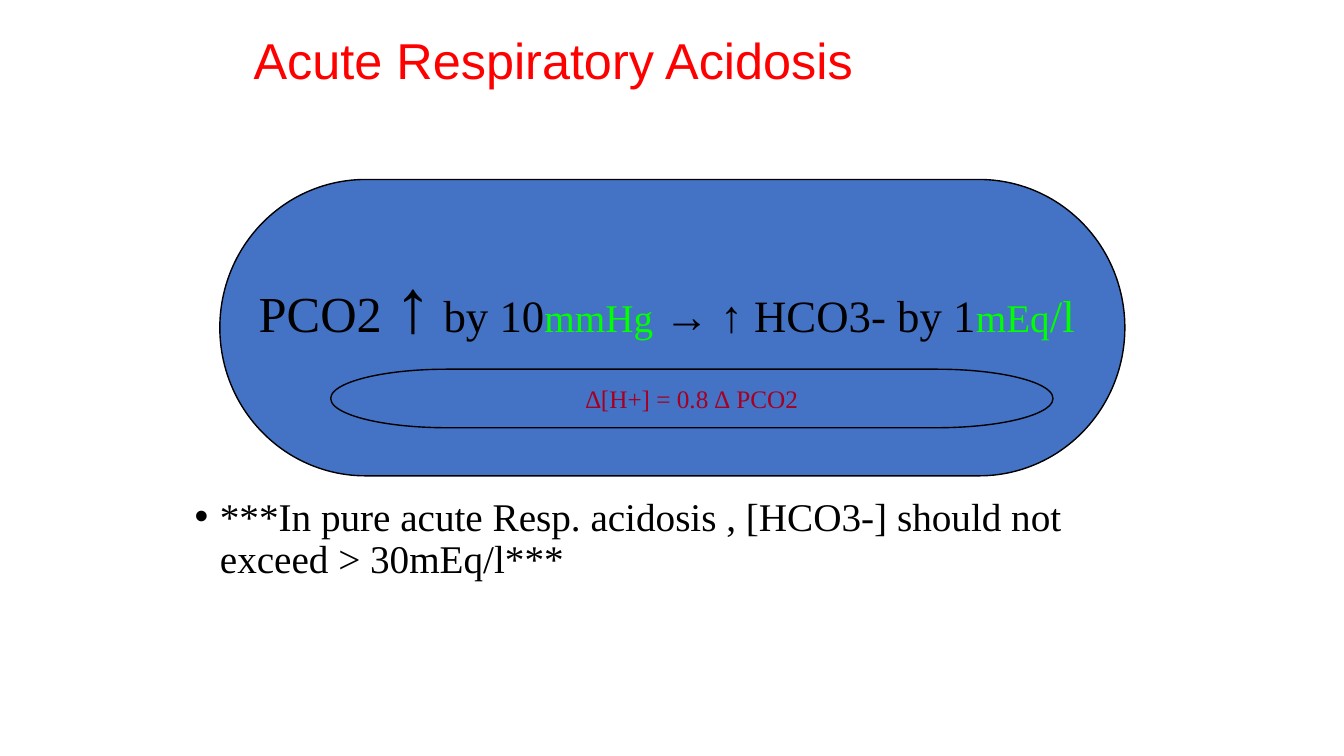
from dataclasses import dataclass

from lxml import etree
from pptx import Presentation
from pptx.dml.color import RGBColor
from pptx.enum.shapes import MSO_SHAPE
from pptx.enum.text import MSO_ANCHOR, PP_ALIGN
from pptx.oxml.ns import qn
from pptx.util import Pt


@dataclass(frozen=True)
class Theme:
    heading_font: str = "Arial"
    body_font: str = "Times New Roman"
    paper: str = "FFFFFF"
    ink: str = "000000"
    title: str = "FF0000"
    panel: str = "4472C4"
    unit: str = "00FF00"
    formula: str = "A50021"
    arrow_size: int = 54
    title_size: int = 36
    rule_size: int = 32
    note_size: int = 28
    formula_size: int = 18


THEME = Theme()


def set_attributes(target, values):
    for name, value in values.items():
        setattr(target, name, value)


def place(shape, box):
    names = ("left", "top", "width", "height")
    set_attributes(shape, {name: Pt(length) for name, length in zip(names, box)})


def add_run(paragraph, text, size, color, font=THEME.body_font):
    run = paragraph.add_run()
    run.text = text
    set_attributes(run.font, {"size": Pt(size), "name": font})
    run.font.color.rgb = RGBColor.from_string(color)


def add_title(slide, box, text):
    title = slide.shapes.title
    place(title, box)
    set_attributes(title.text_frame, {"vertical_anchor": MSO_ANCHOR.MIDDLE, "word_wrap": True})
    paragraph = title.text_frame.paragraphs[0]
    set_attributes(paragraph, {"alignment": PP_ALIGN.LEFT, "line_spacing": 0.9})
    add_run(paragraph, text, THEME.title_size, THEME.title, THEME.heading_font)


def add_note(slide, box, text, text_top):
    """Add a white panel whose bulleted text starts text_top below its upper edge."""
    note = slide.shapes.add_textbox(*map(Pt, box))
    note.fill.solid()
    note.fill.fore_color.rgb = RGBColor.from_string(THEME.paper)
    set_attributes(note.text_frame, {"word_wrap": True, "margin_top": Pt(text_top)})
    paragraph = note.text_frame.paragraphs[0]
    paragraph.line_spacing = 0.9
    add_run(paragraph, text, THEME.note_size, THEME.ink)
    properties = paragraph._p.get_or_add_pPr()
    properties.set("marL", str(Pt(18)))
    properties.set("indent", str(Pt(-18)))
    etree.SubElement(properties, qn("a:buFont")).set("typeface", THEME.heading_font)
    etree.SubElement(properties, qn("a:buChar")).set("char", "•")


def add_terminator(slide, box, runs, margin_bottom=3.6):
    terminator = slide.shapes.add_shape(MSO_SHAPE.FLOWCHART_TERMINATOR, *map(Pt, box))
    terminator.shadow.inherit = False
    terminator.fill.solid()
    terminator.fill.fore_color.rgb = RGBColor.from_string(THEME.panel)
    terminator.line.color.rgb = RGBColor.from_string(THEME.ink)
    terminator.line.width = Pt(1)
    set_attributes(terminator.text_frame, {
        "word_wrap": False,
        "vertical_anchor": MSO_ANCHOR.MIDDLE,
        "margin_bottom": Pt(margin_bottom),
    })
    paragraph = terminator.text_frame.paragraphs[0]
    paragraph.alignment = PP_ALIGN.CENTER
    for text, size, color in runs:
        add_run(paragraph, text, size, color)


def add_rule_panel(slide, box):
    """Add the compensation rule with its formula inset near the lower edge."""
    left, top, width, height = box
    add_terminator(slide, box, [
        ("PCO2 ", THEME.title_size, THEME.ink),
        ("↑", THEME.arrow_size, THEME.ink),
        (" by 10", THEME.rule_size, THEME.ink),
        ("mmHg", THEME.note_size, THEME.unit),
        (" → ↑ HCO3- by 1", THEME.rule_size, THEME.ink),
        ("mEq", THEME.note_size, THEME.unit),
        ("/l ", THEME.rule_size, THEME.unit),
    ], margin_bottom=40)
    formula_box = (left + 79.2, top + 135.5, width - 130.5, 41.8)
    add_terminator(slide, formula_box, [
        ("∆[H+] = 0.8 ∆ PCO2", THEME.formula_size, THEME.formula),
    ])


def build_acidosis_slide(presentation):
    slide = presentation.slides.add_slide(presentation.slide_layouts[5])
    add_title(slide, (174, 12.2, 541, 66.2), "Acute Respiratory Acidosis")
    add_note(
        slide, (132, 144, 696, 396),
        "***In pure acute Resp. acidosis , [HCO3-] should not exceed > 30mEq/l***",
        text_top=211.5,
    )
    add_rule_panel(slide, (157, 128.2, 646.5, 211.7))


def main():
    presentation = Presentation()
    set_attributes(presentation, {"slide_width": Pt(960), "slide_height": Pt(540)})
    build_acidosis_slide(presentation)
    presentation.save("out.pptx")


if __name__ == "__main__":
    main()
